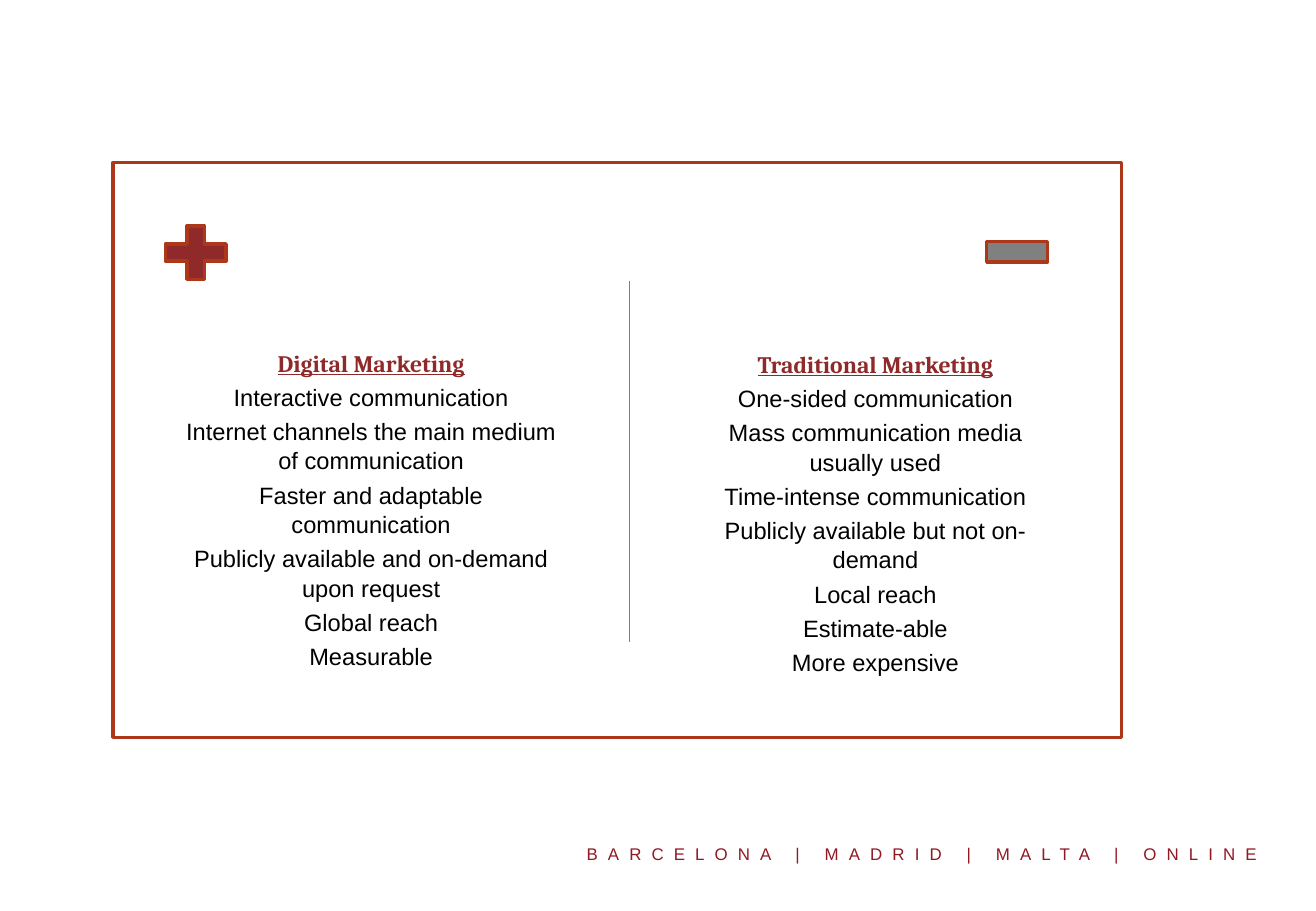
from lxml.etree import SubElement
from pptx import Presentation
from pptx.dml.color import RGBColor
from pptx.enum.shapes import MSO_CONNECTOR, MSO_SHAPE
from pptx.enum.text import MSO_ANCHOR, PP_ALIGN
from pptx.oxml.ns import qn
from pptx.util import Inches, Pt

THEME = {
    "paper": RGBColor.from_string("FFFFFF"),
    "border": RGBColor.from_string("AC3819"),
    "accent": RGBColor.from_string("90292A"),
    "grey": RGBColor.from_string("808080"),
    "text": RGBColor.from_string("000000"),
    "footer": RGBColor.from_string("921824"),
    "heading_font": "Cambria",
    "body_font": "Arial",
    "body_size": Pt(14),
    "footer_size": Pt(10),
}

prs = Presentation()
prs.slide_width, prs.slide_height = Inches(10.83), Inches(7.5)
s = prs.slides.add_slide(prs.slide_layouts[6])


def share(x, y, *size):
    sides = (prs.slide_width, prs.slide_height) * 2
    return [int(side * v / 100) for side, v in zip(sides, (x, y, *size))]


def set_font(p, name, size, color, strong=False):
    p.font.name, p.font.size = name, size
    p.font.color.rgb = color
    p.font.bold = p.font.underline = strong


tf = s.shapes.add_textbox(*share(43.67, 92, 54.39, 3.6)).text_frame
tf.word_wrap = False
p = tf.paragraphs[0]
r = p.add_run()
r.text = "BARCELONA | MADRID | MALTA | ONLINE"
r._r.get_or_add_rPr().set("spc", "600")
set_font(p, THEME["body_font"], THEME["footer_size"], THEME["footer"])

for kind, box, fill in (
    (MSO_SHAPE.RECTANGLE, (8.59, 17.87, 76.64, 63.07), "paper"),
    (MSO_SHAPE.MATH_PLUS, (11.73, 23.73, 6.28, 8), "accent"),
    (MSO_SHAPE.MATH_MINUS, (74.15, 22.93, 6.28, 9.47), "grey"),
):
    sp = s.shapes.add_shape(kind, *share(*box))
    sp.shadow.inherit = False
    sp.fill.solid()
    sp.fill.fore_color.rgb = THEME[fill]
    sp.line.color.rgb = THEME["border"]
    sp.line.width = Pt(2)

columns = (
    (51.52, 37.6, (
        "Traditional Marketing",
        "One-sided communication",
        "Mass communication media usually used",
        "Time-intense communication",
        "Publicly available but not on-demand",
        "Local reach",
        "Estimate-able",
        "More expensive",
    )),
    (13.2, 37.47, (
        "Digital Marketing",
        "Interactive communication",
        "Internet channels the main medium of communication",
        "Faster and adaptable communication",
        "Publicly available and on-demand upon request",
        "Global reach",
        "Measurable",
    )),
)
for left, top, lines in columns:
    tf = s.shapes.add_textbox(*share(left, top, 30.01, 39.73)).text_frame
    tf.word_wrap = True
    tf.vertical_anchor = MSO_ANCHOR.TOP
    for i, line in enumerate(lines):
        p = tf.add_paragraph() if i else tf.paragraphs[0]
        p.text = line
        p.alignment = PP_ALIGN.CENTER
        p.line_spacing = 1.04
        if i:
            p.space_before = Pt(2.8)
            set_font(p, THEME["body_font"], THEME["body_size"], THEME["text"])
        else:
            set_font(p, THEME["heading_font"], THEME["body_size"], THEME["accent"], True)

divider = s.shapes.add_connector(
    MSO_CONNECTOR.STRAIGHT, *share(47.83, 30.8, 47.83, 70.53)
)
divider.line.color.rgb = THEME["grey"]
divider.line.width = Pt(0.75)
SubElement(divider._element.spPr, qn("a:effectLst"))

prs.save("out.pptx")
